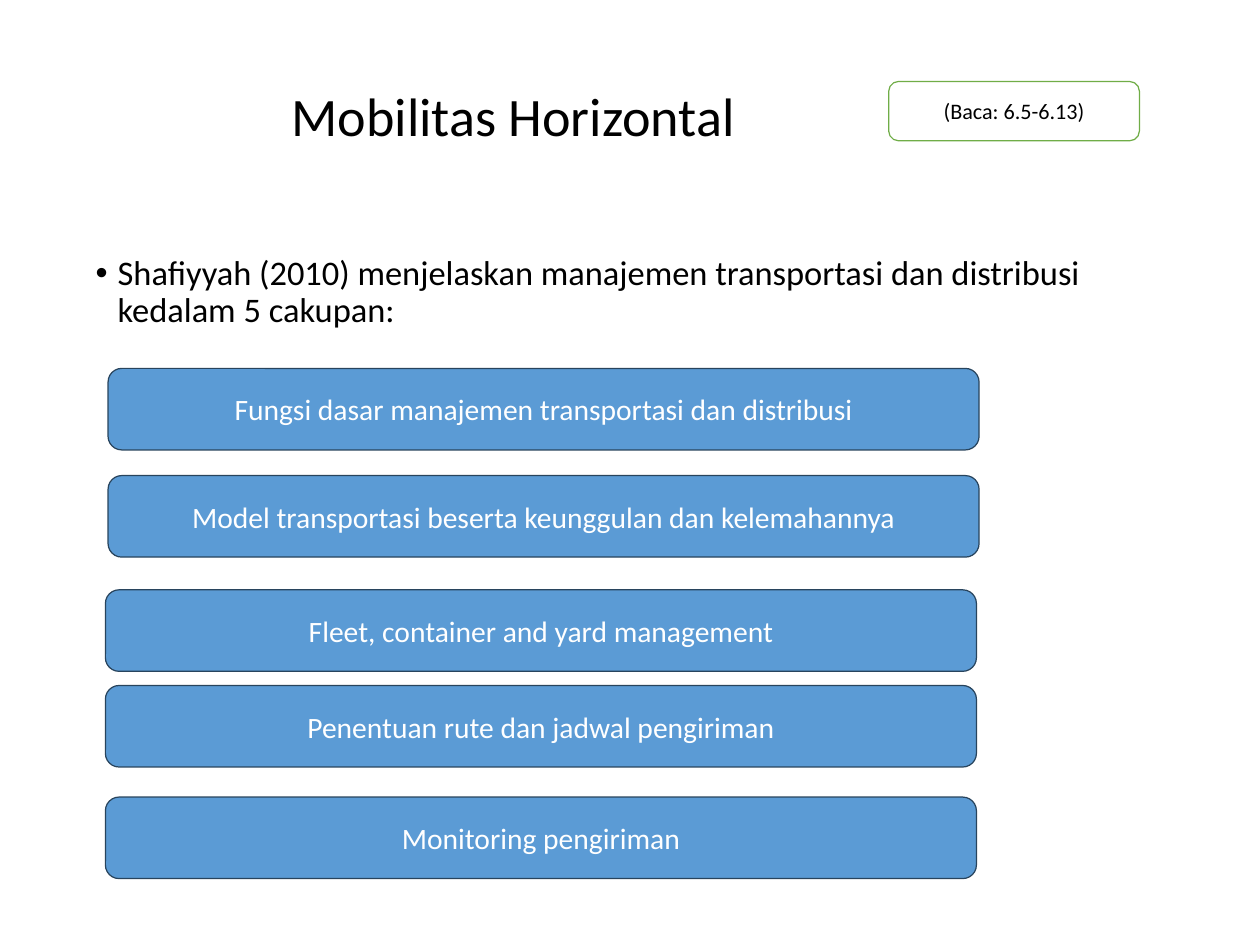
from dataclasses import dataclass

from lxml import etree
from pptx import Presentation
from pptx.dml.color import RGBColor
from pptx.enum.shapes import MSO_SHAPE
from pptx.enum.text import MSO_ANCHOR, PP_ALIGN
from pptx.oxml.ns import qn
from pptx.shapes.base import BaseShape
from pptx.slide import Slide
from pptx.util import Inches, Pt

BLACK = RGBColor(0x00, 0x00, 0x00)
WHITE = RGBColor(0xFF, 0xFF, 0xFF)
GREEN = RGBColor(0x70, 0xAD, 0x47)
BLUE = RGBColor(0x5B, 0x9B, 0xD5)
NAVY = RGBColor(0x28, 0x44, 0x5D)

ROUNDED = MSO_SHAPE.ROUNDED_RECTANGLE
MIDDLE = MSO_ANCHOR.MIDDLE
TOP = MSO_ANCHOR.TOP
LEFT = PP_ALIGN.LEFT
CENTER = PP_ALIGN.CENTER

FONT = "Calibri"
BULLET_INDENT = Inches(0.25)


@dataclass(frozen=True)
class Frame:
    left: float
    top: float
    width: float
    height: float

    def lengths(self) -> list[int]:
        return [Inches(n) for n in (self.left, self.top, self.width, self.height)]


@dataclass(frozen=True)
class TextStyle:
    size: int
    color: RGBColor
    align: PP_ALIGN = LEFT
    anchor: MSO_ANCHOR = MIDDLE
    line_spacing: float = 1.0
    bullet: bool = False


@dataclass(frozen=True)
class CardStyle:
    fill: RGBColor
    line: RGBColor
    text: TextStyle


@dataclass(frozen=True)
class Card:
    text: str
    frame: Frame
    style: CardStyle


TITLE_STYLE = TextStyle(44, BLACK, line_spacing=0.9)
INTRO_STYLE = TextStyle(28, BLACK, anchor=TOP, line_spacing=0.9, bullet=True)
NOTE_STYLE = CardStyle(WHITE, GREEN, TextStyle(18, BLACK, CENTER))
SCOPE_STYLE = CardStyle(BLUE, NAVY, TextStyle(24, WHITE, CENTER))

SCOPES = [
    ("Fungsi dasar manajemen transportasi dan distribusi", 1.22, 4.16),
    ("Model transportasi beserta keunggulan dan kelemahannya", 1.22, 5.37),
    ("Fleet, container and yard management", 1.19, 6.66),
    ("Penentuan rute dan jadwal pengiriman", 1.19, 7.74),
    ("Monitoring pengiriman", 1.19, 9.0),
]
CARDS = [Card("(Baca: 6.5-6.13)", Frame(10.03, 0.92, 2.83, 0.67), NOTE_STYLE)] + [
    Card(text, Frame(left, top, 9.83, 0.92), SCOPE_STYLE) for text, left, top in SCOPES
]


def write_text(box: BaseShape, text: str, style: TextStyle) -> None:
    frame = box.text_frame
    frame.word_wrap = True
    frame.vertical_anchor = style.anchor
    para = frame.paragraphs[0]
    para.alignment = style.align
    para.line_spacing = style.line_spacing
    if style.bullet:
        properties = para._p.get_or_add_pPr()
        properties.set("marL", str(BULLET_INDENT))
        properties.set("indent", str(-BULLET_INDENT))
        etree.SubElement(properties, qn("a:buFont"), typeface="Arial")
        etree.SubElement(properties, qn("a:buChar"), char="•")
    span = para.add_run()
    span.text = text
    span.font.color.rgb = style.color
    for name, value in {"name": FONT, "size": Pt(style.size)}.items():
        setattr(span.font, name, value)


def add_text(page: Slide, text: str, frame: Frame, style: TextStyle) -> None:
    write_text(page.shapes.add_textbox(*frame.lengths()), text, style)


def add_card(page: Slide, card: Card) -> None:
    box = page.shapes.add_shape(ROUNDED, *card.frame.lengths())
    box.shadow.inherit = False
    box.fill.solid()
    box.fill.fore_color.rgb = card.style.fill
    box.line.color.rgb = card.style.line
    box.line.width = Pt(1)
    write_text(box, card.text, card.style.text)


def main() -> None:
    deck = Presentation()
    deck.slide_width = Inches(14.22)
    deck.slide_height = Inches(10.67)
    page = deck.slides.add_slide(deck.slide_layouts[6])
    add_text(page, "Mobilitas Horizontal", Frame(3.19, 0.92, 5.25, 0.85), TITLE_STYLE)
    add_text(
        page,
        "Shafiyyah (2010) menjelaskan manajemen transportasi dan distribusi "
        "kedalam 5 cakupan:",
        Frame(0.98, 2.84, 12.27, 6.77),
        INTRO_STYLE,
    )
    for card in CARDS:
        add_card(page, card)
    deck.save("out.pptx")


if __name__ == "__main__":
    main()
